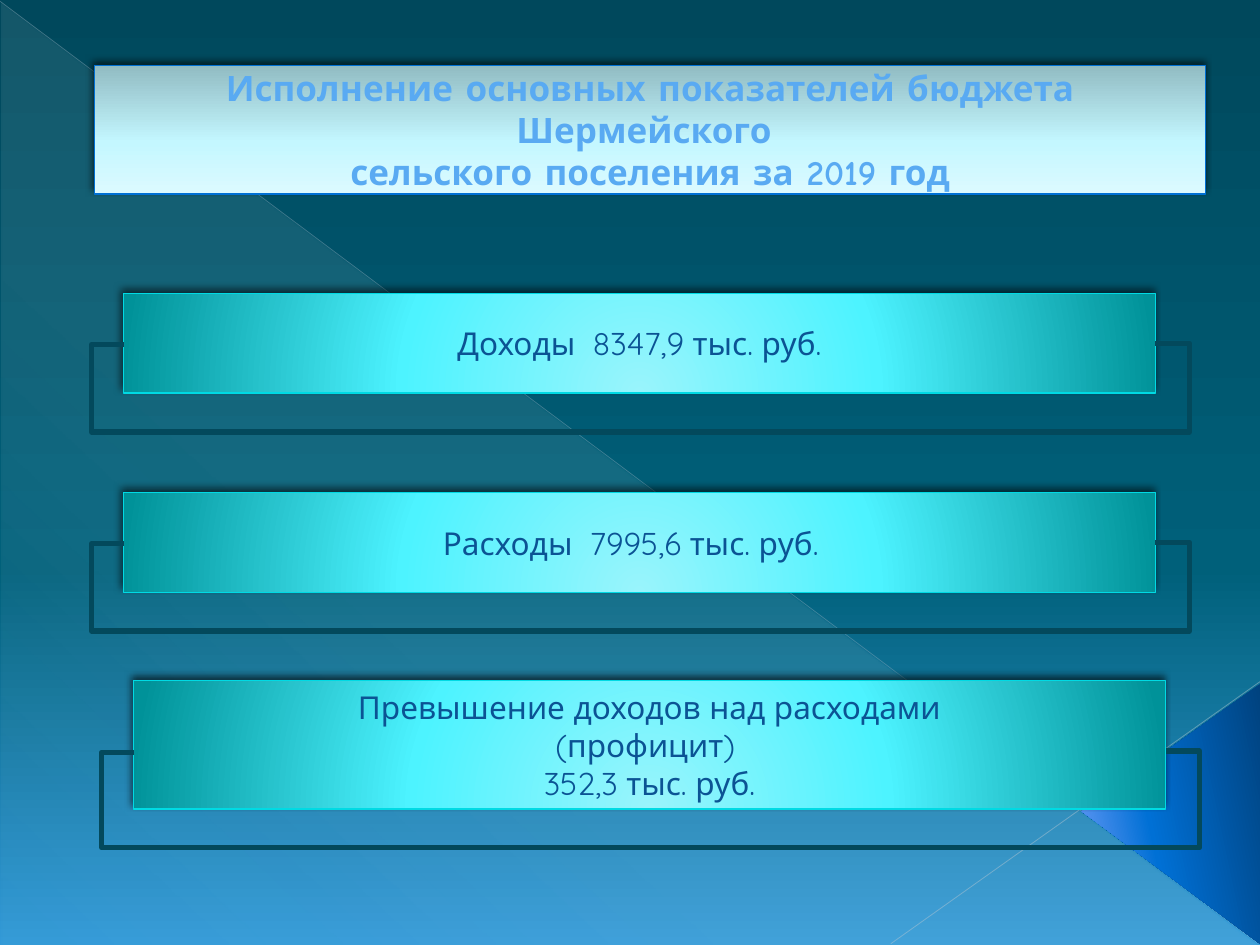
import pptx
import pptx.util
import pptx.dml.color
import pptx.enum.shapes
import pptx.enum.text
import pptx.oxml
import pptx.oxml.ns

Inches, Pt = pptx.util.Inches, pptx.util.Pt
RGB = pptx.dml.color.RGBColor.from_string
KIND = pptx.enum.shapes.MSO_SHAPE
qn = pptx.oxml.ns.qn
NS = pptx.oxml.ns.nsdecls("a")

COLORS = {
    "bar": "0B5394", "edge": "00DAE4", "loop": "03495C",
    "title": "59AAF2", "frame": "0070D5", "shade": "000000",
    "long": "ACC0CE", "short": "B5C7D3",
}
# Each stop: position, colour, opacity (all but colour in percent)
GRADS = {
    "back": [(0, "00485C", 100), (60, "00607A", 100), (100, "3299D7", 100)],
    "veil": [(0, "DBF5F9", 10), (70, "DBF5F9", 8), (100, "DBF5F9", 1)],
    "wedge": [(0, "00427E", 100), (60, "0070D5", 100), (100, "769FFA", 100)],
    "bar": [(0, "99F4FC", 100), (46, "4DF3FF", 100), (100, "009299", 100)],
    "title": [(0, "91BCC3", 100), (60, "C4F7FF", 100), (100, "DCFAFF", 100)],
}
GLOW = ('<a:path path="circle"><a:fillToRect l="50000" t="155000" '
        'r="50000" b="-55000"/></a:path>')
BARS = [  # left, top, width, height, drop of the loop's ends below middle, lines
    (0.98, 2.33, 8.19, 0.79, 0.01, ["Доходы  8347,9 тыс. руб."]),
    (0.98, 3.91, 8.19, 0.79, 0.01, ["Расходы  7995,6 тыс. руб.  "]),
    (1.06, 5.4, 8.19, 1.02, 0.06, ["Превышение доходов над расходами",
                                   "(профицит) ", "352,3 тыс. руб."]),
]


def parse(xml):
    return pptx.oxml.parse_xml(xml)


def blend(fill, props, name, angle=None):
    """Give a gradient: linear at an angle, or a glow from below."""
    fill.solid()
    stops = "".join(
        f'<a:gs pos="{pos * 1000}"><a:srgbClr val="{color}">'
        f'<a:alpha val="{alpha * 1000}"/></a:srgbClr></a:gs>'
        for pos, color, alpha in GRADS[name])
    way = GLOW if angle is None else f'<a:lin ang="{angle * 60000}" scaled="0"/>'
    grad = parse(f'<a:gradFill {NS} rotWithShape="1"><a:gsLst>{stops}'
                 f'</a:gsLst>{way}</a:gradFill>')
    props.replace(props.find(qn("a:solidFill")), grad)


def panel(shape, edge):
    """Outline a box and cast its shadow."""
    shape.line.color.rgb = RGB(COLORS[edge])
    shape.line.width = Pt(0.75)
    shape.shadow.inherit = False
    shape.element.spPr.find(qn("a:effectLst")).append(parse(
        f'<a:outerShdw {NS} blurRad="{Pt(4)}" dist="{Pt(3)}" '
        f'dir="{245 * 60000}" rotWithShape="0"><a:srgbClr val="{COLORS["shade"]}">'
        '<a:alpha val="60000"/></a:srgbClr></a:outerShdw>'))


def write(shape, lines, face, size, color, bold):
    frame = shape.text_frame
    frame.text = "\n".join(lines)
    frame.word_wrap = True
    frame.auto_size = pptx.enum.text.MSO_AUTO_SIZE.NONE
    frame.vertical_anchor = pptx.enum.text.MSO_ANCHOR.MIDDLE
    for par in frame.paragraphs:
        par.alignment = pptx.enum.text.PP_ALIGN.CENTER
        par.font.name = face
        par.font.size = Pt(size)
        par.font.bold = bold
        par.font.color.rgb = RGB(COLORS[color])


def wire(slide, kind, ends, color, width):
    line = slide.shapes.add_connector(kind, *map(Inches, ends))
    line.line.color.rgb = RGB(COLORS[color])
    line.line.width = Pt(width)
    line.element.spPr.append(parse(f"<a:effectLst {NS}/>"))
    return line


def plain(slide, kind, box, grad, angle):
    shape = slide.shapes.add_shape(kind, *map(Inches, box))
    blend(shape.fill, shape.element.spPr, grad, angle)
    shape.line.fill.background()
    shape.shadow.inherit = False
    return shape


def decor(slide):
    """Draw the backdrop: gradient, veil, crossing lines and wedge."""
    fill = slide.background.fill
    fill.solid()
    blend(fill, slide.element.find(".//" + qn("p:bgPr")), "back", 90)
    plain(slide, KIND.RIGHT_TRIANGLE, (0.01, 0.02, 9.98, 7.48), "veil", 133)
    for ends, color, width, alpha in [
            ((0, 0.01, 9.99, 7.49), "long", 0.39, 35),
            ((10, 5.41, 7.07, 7.49), "short", 0.47, 45)]:
        line = wire(slide, pptx.enum.shapes.MSO_CONNECTOR.STRAIGHT,
                    ends, color, width)
        line.element.spPr.find(".//" + qn("a:srgbClr")).append(
            parse(f'<a:alpha {NS} val="{alpha * 1000}"/>'))
    wedge = plain(slide, KIND.ISOSCELES_TRIANGLE, (8.26, 5.75, 2.07, 1.42),
                  "wedge", 258)
    wedge.adjustments[0] = 0.51
    wedge.rotation = 270


def head(slide, left, top, width, height):
    title = slide.shapes.title
    title.left, title.top = Inches(left), Inches(top)
    title.width, title.height = Inches(width), Inches(height)
    slide.shapes.element.append(title.element)  # in front of the backdrop
    blend(title.fill, title.element.spPr, "title", 90)
    panel(title, "frame")
    write(title, ["Исполнение основных показателей бюджета Шермейского ",
                  "сельского поселения за 2019 год"],
          "Comic Neue", 20, "title", True)


def bar(slide, left, top, width, height, lines):
    shape = slide.shapes.add_shape(
        KIND.RECTANGLE, *map(Inches, (left, top, width, height)))
    blend(shape.fill, shape.element.spPr, "bar")
    panel(shape, "edge")
    write(shape, lines, "Quicksand", 18, "bar", False)


def loop(slide, left, top, width, height, drop):
    """Run a five-part elbow from a bar's left side, below it, to its right."""
    rise, start = 0.01, top + height / 2 + drop
    line = wire(slide, pptx.enum.shapes.MSO_CONNECTOR.ELBOW,
                (left, start, left + width, start - rise), "loop", 3)
    props = line.element.spPr
    frame = props.find(qn("a:xfrm"))
    frame.attrib.pop("flipV")
    frame.set("rot", "10800000")
    frame.set("flipH", "1")
    depth = top + height + 0.32 - start
    bends = (-0.25 / width, -depth / rise, 1 + 0.27 / width)
    guides = "".join(f'<a:gd name="adj{i}" fmla="val {round(bend * 100000)}"/>'
                     for i, bend in enumerate(bends, 1))
    props.replace(props.find(qn("a:prstGeom")), parse(
        f'<a:prstGeom {NS} prst="bentConnector5"><a:avLst>{guides}'
        '</a:avLst></a:prstGeom>'))


def main():
    deck = pptx.Presentation()
    deck.slide_width, deck.slide_height = Inches(10), Inches(7.5)
    slide = deck.slides.add_slide(deck.slide_layouts[5])
    decor(slide)
    head(slide, 0.75, 0.52, 8.82, 1.02)
    for *box, drop, lines in BARS:
        bar(slide, *box, lines)
    for *box, drop, lines in BARS:
        loop(slide, *box, drop)
    deck.save("out.pptx")


if __name__ == "__main__":
    main()
